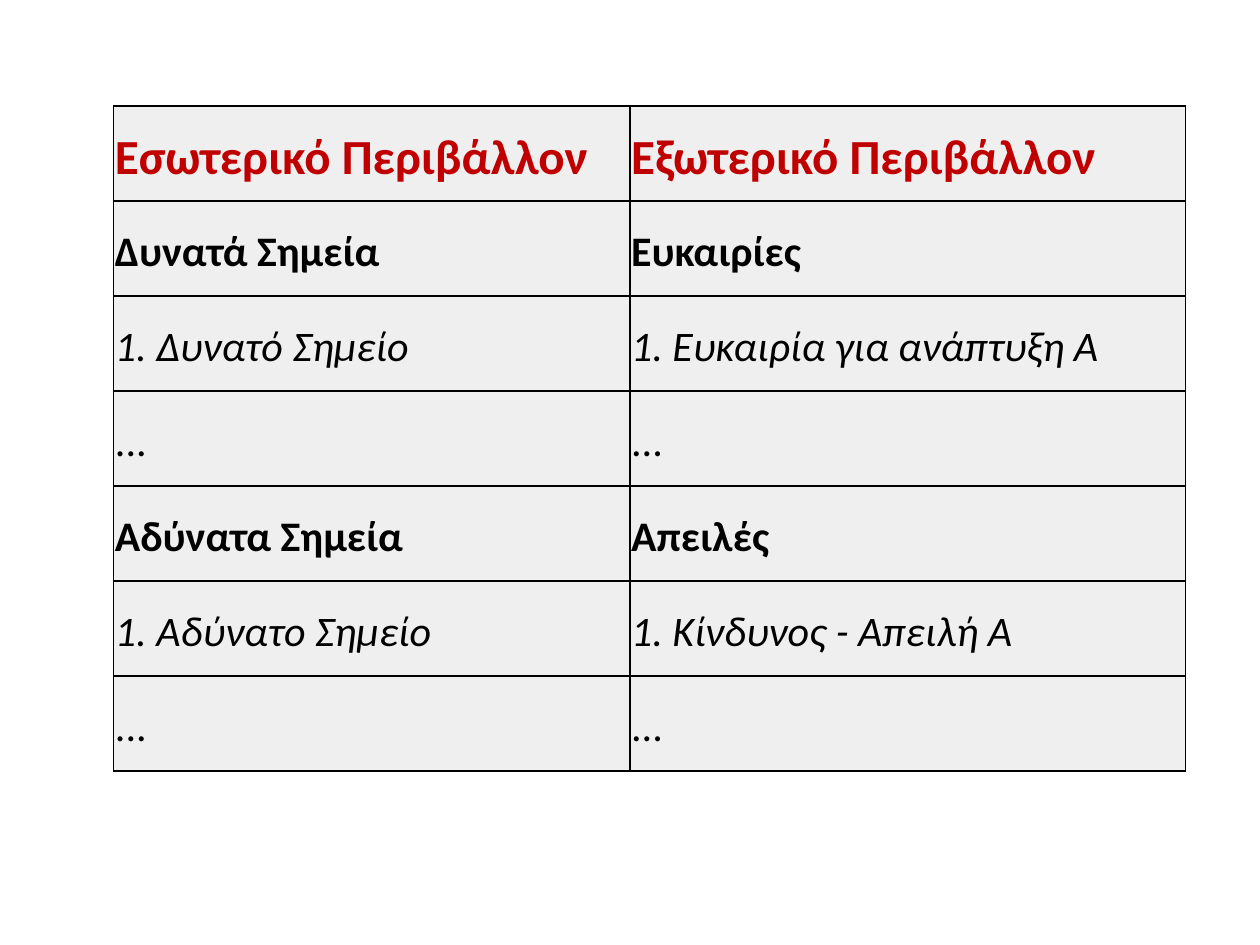
from lxml.etree import SubElement
from pptx import Presentation
from pptx.dml.color import RGBColor
from pptx.enum.text import MSO_ANCHOR
from pptx.oxml.ns import qn
from pptx.util import Pt

HEADING = {"size": 28, "bold": True, "color": "C00000"}
SUBHEADING = {"bold": True}
ENTRY = {"italic": True}
PLAIN = {}

ROWS = [
    (HEADING, "Εσωτερικό Περιβάλλον", "Εξωτερικό Περιβάλλον"),
    (SUBHEADING, "Δυνατά Σημεία", "Ευκαιρίες"),
    (ENTRY, "1. Δυνατό Σημείο", "1. Ευκαιρία για ανάπτυξη Α"),
    (PLAIN, "...", "..."),
    (SUBHEADING, "Αδύνατα Σημεία", "Απειλές"),
    (ENTRY, "1. Αδύνατο Σημείο", "1. Κίνδυνος - Απειλή Α"),
    (PLAIN, "...", "..."),
]
COLUMN_WIDTHS = (295, 317.5)
LEFT, TOP, ROW_HEIGHT = 65, 60.5, 54.3
MARGIN = 0.7


def rgb(value):
    """Turn a hex string into a colour."""
    return RGBColor.from_string(value)


def write(cell, text, size=24, bold=False, italic=False, color="000000"):
    """Put one formatted paragraph into a cell."""
    paragraph = cell.text_frame.paragraphs[0]
    paragraph.line_spacing = 1.15
    paragraph.space_after = Pt(10)
    run = paragraph.add_run()
    run.text = text
    run.font.name = "Calibri"
    run.font.size = Pt(size)
    run.font.bold = bold
    run.font.italic = italic
    run.font.color.rgb = rgb(color)


def add_borders(cell, color="000000", width=1):
    """Draw a solid line on all four sides, ahead of the cell fill."""
    properties = cell._tc.get_or_add_tcPr()
    for position, side in enumerate(("lnL", "lnR", "lnT", "lnB")):
        line = SubElement(properties, qn(f"a:{side}"), w=str(Pt(width)))
        fill = SubElement(line, qn("a:solidFill"))
        SubElement(fill, qn("a:srgbClr"), val=color)
        properties.insert(position, line)


def style_cell(cell):
    """Set the fill, margins, anchor and borders of a cell."""
    cell.fill.solid()
    cell.fill.fore_color.rgb = rgb("EFEFEF")
    cell.margin_left = cell.margin_right = Pt(MARGIN)
    cell.margin_top = cell.margin_bottom = Pt(MARGIN)
    cell.vertical_anchor = MSO_ANCHOR.MIDDLE
    add_borders(cell)


def main():
    """Build the slide with the SWOT table."""
    presentation = Presentation()
    presentation.slide_width, presentation.slide_height = Pt(720), Pt(540)
    slide = presentation.slides.add_slide(presentation.slide_layouts[6])
    table = slide.shapes.add_table(
        len(ROWS), len(COLUMN_WIDTHS), Pt(LEFT), Pt(TOP),
        Pt(sum(COLUMN_WIDTHS)), Pt(ROW_HEIGHT * len(ROWS)),
    ).table
    table.first_row = table.horz_banding = False
    for column, width in zip(table.columns, COLUMN_WIDTHS):
        column.width = Pt(width)
    for row, (style, *texts) in zip(table.rows, ROWS):
        row.height = Pt(ROW_HEIGHT)
        for cell, text in zip(row.cells, texts):
            style_cell(cell)
            write(cell, text, **style)
    presentation.save("out.pptx")


if __name__ == "__main__":
    main()
